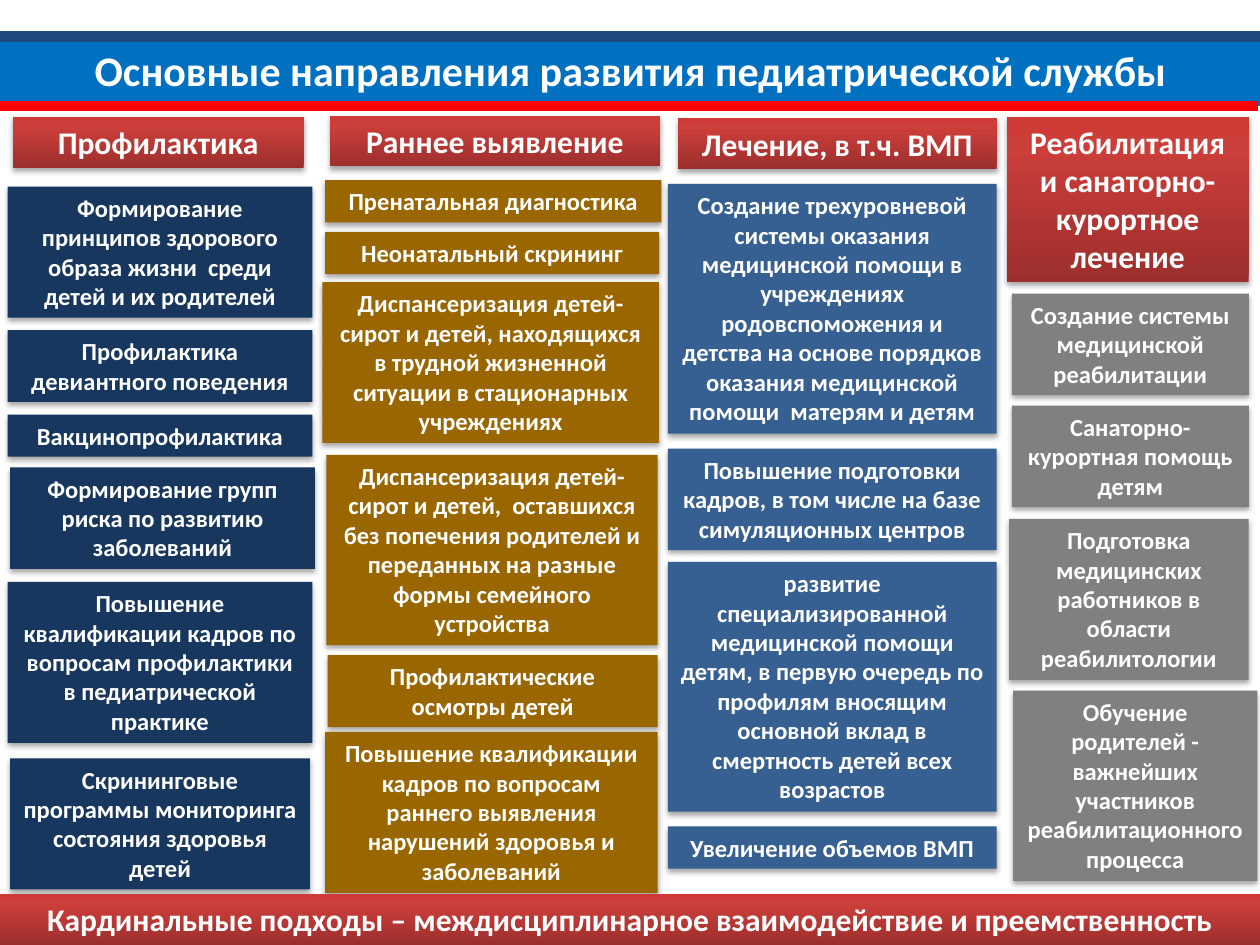
from copy import deepcopy

from lxml import etree
from pptx import Presentation
from pptx.dml.color import RGBColor
from pptx.enum.shapes import MSO_CONNECTOR, MSO_SHAPE
from pptx.enum.text import MSO_ANCHOR, MSO_AUTO_SIZE, PP_ALIGN
from pptx.oxml.ns import qn
from pptx.util import Pt

RECTANGLE = MSO_SHAPE.RECTANGLE
STRAIGHT = MSO_CONNECTOR.STRAIGHT
TOP, MIDDLE = MSO_ANCHOR.TOP, MSO_ANCHOR.MIDDLE
GROW = MSO_AUTO_SIZE.SHAPE_TO_FIT_TEXT
CENTER = PP_ALIGN.CENTER

WIDTH, HEIGHT = 720, 540
FONT = "Calibri"
WHITE, BLUE, NAVY_RULE, THIN_RULE, RED = "FFFFFF", "0070C0", "1F497D", "4B7EBC", "FF0000"
RED_GRADIENT = [(0, "9C2F2D"), (0.8, "CB3E3A"), (1, "CE3B37")]
HEADING_SIZE, CARD_SIZE = 18, 14

COLUMNS = [
    {
        "box": (4.3, 67, 174.2),
        "color": "17375E",
        "heading": (2.9, 0, -7.9, 1, "Профилактика"),
        "cards": [
            (0, 39.6, 0, 4, "Формирование принципов здорового образа жизни  среди детей и их родителей"),
            (0, 121.6, 0, 2, "Профилактика девиантного поведения"),
            (0, 169.9, 0, 1, "Вакцинопрофилактика"),
            (1.5, 200.1, 0, 3, "Формирование групп риска по развитию заболеваний"),
            (0, 265.6, 0, 5, "Повышение квалификации кадров по вопросам профилактики в педиатрической практике"),
            (1.5, 366.4, -2.9, 4, "Скрининговые программы мониторинга состояния здоровья детей"),
        ],
    },
    {
        "box": (185.8, 66.2, 190.8),
        "color": "996600",
        "heading": (2.8, 0, -2.2, 1, "Раннее выявление"),
        "cards": [
            (0, 36.8, 1.4, 1, "Пренатальная диагностика"),
            (0, 66.3, 0, 1, "Неонатальный скрининг"),
            (-1.5, 95.1, 1.4, 5, "Диспансеризация детей-сирот и детей, находящихся в трудной жизненной ситуации в стационарных учреждениях"),
            (0.7, 193.7, -1.4, 6, "Диспансеризация детей-сирот и детей,  оставшихся без попечения родителей и переданных на разные формы семейного устройства"),
            (1.4, 308.2, -2.2, 2, "Профилактические осмотры детей"),
            (0, 352.1, -0.7, 5, "Повышение квалификации кадров по вопросам раннего выявления нарушений здоровья и заболеваний"),
        ],
    },
    {
        "box": (381.6, 67.7, 187.9),
        "color": "376092",
        "heading": (5.8, 0, -5.7, 1, "Лечение, в т.ч. ВМП"),
        "cards": [
            (0, 37.4, 0, 8, "Создание трехуровневой системы оказания медицинской помощи в учреждениях родовспоможения и детства на основе порядков оказания медицинской помощи  матерям и детям"),
            (0, 188.6, 0, 3, "Повышение подготовки кадров, в том числе на базе симуляционных центров"),
            (0, 253.4, 0, 8, "развитие специализированной медицинской помощи детям, в первую очередь по профилям вносящим основной вклад в смертность детей всех возрастов"),
            (0, 404.6, 0, 1, "Увеличение объемов ВМП"),
        ],
    },
    {
        "box": (578.2, 67, 135.4),
        "color": "808080",
        "heading": (-2.9, 0, 2.8, 4, "Реабилитация и санаторно-курортное лечение"),
        "cards": [
            (0, 100.8, 0, 3, "Создание системы медицинской реабилитации"),
            (0, 164.8, 0, 3, "Санаторно-курортная помощь детям"),
            (-1.5, 229.6, 1.4, 5, "Подготовка медицинских работников в области реабилитологии"),
            (0.7, 327.6, 4.3, 6, "Обучение родителей - важнейших участников реабилитационного процесса"),
        ],
    },
]


def rgb(value):
    return RGBColor.from_string(value)


def text_height(lines, size):
    return 7.2 + 1.21 * size * lines


def add_block(slide, left, top, width, height, color):
    block = slide.shapes.add_shape(RECTANGLE, Pt(left), Pt(top), Pt(width), Pt(height))
    block.shadow.inherit = False
    block.fill.solid()
    block.fill.fore_color.rgb = rgb(color)
    block.line.fill.background()
    return block


def write_text(block, text, size, anchor):
    frame = block.text_frame
    frame.word_wrap = True
    frame.vertical_anchor = anchor
    paragraph = frame.paragraphs[0]
    paragraph.text = text
    paragraph.alignment = CENTER
    font = paragraph.font
    font.name, font.size, font.bold = FONT, Pt(size), True
    font.color.rgb = rgb(WHITE)


def add_shadow(block):
    effects = block._element.spPr.find(qn("a:effectLst"))
    shadow = etree.SubElement(
        effects, qn("a:outerShdw"),
        blurRad=str(Pt(3.15)), dist=str(Pt(1.81)), dir="5400000", rotWithShape="0",
    )
    black = etree.SubElement(shadow, qn("a:srgbClr"), val="000000")
    etree.SubElement(black, qn("a:alpha"), val="35000")


def paint_gradient(block):
    block.fill.gradient()
    block.fill.gradient_angle = 90
    stops = block._element.spPr.find(qn("a:gradFill")).find(qn("a:gsLst"))
    stops.append(deepcopy(stops[0]))
    for stop, (position, color) in zip(block.fill.gradient_stops, RED_GRADIENT):
        stop.position = position
        stop.color.rgb = rgb(color)


def add_card(slide, left, top, width, lines, text, size, color=None):
    card = add_block(slide, left, top, width, text_height(lines, size), color or RED)
    if color is None:
        paint_gradient(card)
    add_shadow(card)
    write_text(card, text, size, TOP)
    card.text_frame.auto_size = GROW


def add_rule(slide, left, top, width, color, weight):
    rule = slide.shapes.add_connector(STRAIGHT, Pt(left), Pt(top), Pt(left + width), Pt(top))
    rule.line.color.rgb = rgb(color)
    rule.line.width = Pt(weight)
    etree.SubElement(rule._element.spPr, qn("a:effectLst"))


def build_banner(slide, left, top, width, height):
    add_block(slide, left, top, width, height, BLUE)
    add_rule(slide, left, top, width, THIN_RULE, 0.75)
    add_rule(slide, left, top, width, NAVY_RULE, 6)
    add_rule(slide, left - 1.4, top + height, width, RED, 6)
    title = add_block(slide, left + 14.4, top + 5.8, width - 28.1, 25.9, BLUE)
    write_text(title, "Основные направления развития педиатрической службы", 24, MIDDLE)


def build_column(slide, left, top, width, column):
    entries = [(column["heading"], HEADING_SIZE, None)]
    entries += [(card, CARD_SIZE, column["color"]) for card in column["cards"]]
    for (shift, drop, widening, lines, text), size, color in entries:
        add_card(slide, left + shift, top + drop, width + widening, lines, text, size, color)


def build_footer(slide, left, bottom, width):
    top = bottom - text_height(1, HEADING_SIZE)
    conclusion = "Кардинальные подходы – междисциплинарное взаимодействие и преемственность"
    add_card(slide, left, top, width, 1, conclusion, HEADING_SIZE)


def main():
    presentation = Presentation()
    presentation.slide_width, presentation.slide_height = Pt(WIDTH), Pt(HEIGHT)
    slide = presentation.slides.add_slide(presentation.slide_layouts[6])
    build_banner(slide, 0, 20.9, WIDTH, 39.6)
    for column in COLUMNS:
        build_column(slide, *column["box"], column)
    build_footer(slide, 0, HEIGHT, WIDTH)
    presentation.save("out.pptx")


if __name__ == "__main__":
    main()
